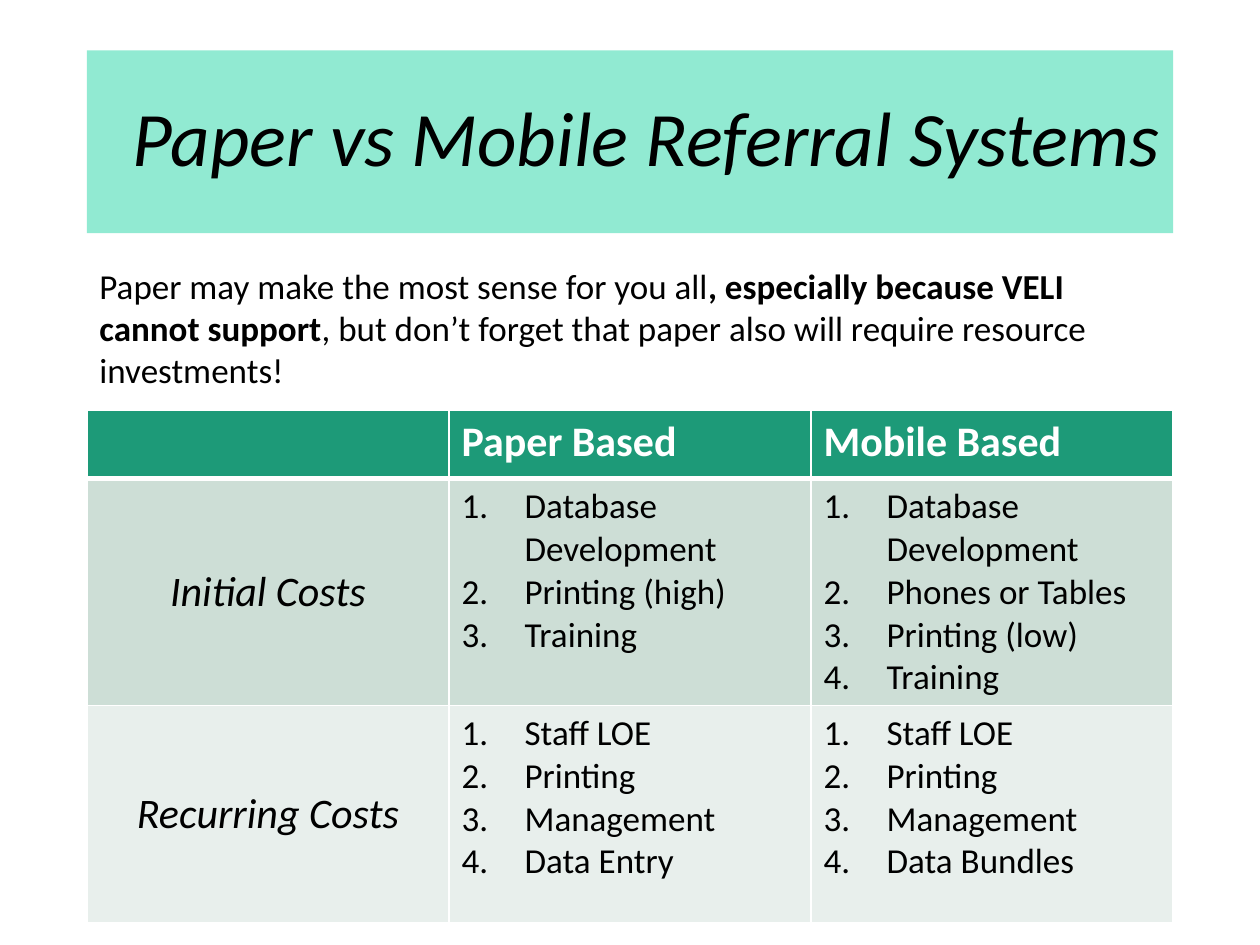
"""Build the slide comparing costs of paper and mobile referral systems."""
from lxml.etree import SubElement
from pptx import Presentation
from pptx.dml.color import RGBColor
from pptx.enum.shapes import MSO_SHAPE
from pptx.enum.text import MSO_ANCHOR, PP_ALIGN
from pptx.oxml.ns import qn
from pptx.util import Inches, Pt

BLACK = RGBColor(0x00, 0x00, 0x00)
WHITE = RGBColor(0xFF, 0xFF, 0xFF)
MINT = RGBColor(0x91, 0xEA, 0xD2)
GREEN = RGBColor(0x1D, 0x9A, 0x78)
SAGE = RGBColor(0xCD, 0xDE, 0xD6)
PALE = RGBColor(0xE8, 0xEF, 0xEC)

TITLE = "Paper vs Mobile Referral Systems"
INTRO = [
    ("Paper may make the most sense for you all", False),
    (", especially because VELI cannot support", True),
    (", but don’t forget that paper also will require resource investments!", False),
]
SYSTEMS = ["", "Paper Based", "Mobile Based"]
COSTS = [
    ("Initial Costs", SAGE, [
        ["Database Development", "Printing (high)", "Training"],
        ["Database Development", "Phones or Tables", "Printing (low)", "Training"],
    ]),
    ("Recurring Costs", PALE, [
        ["Staff LOE", "Printing", "Management", "Data Entry"],
        ["Staff LOE", "Printing", "Management", "Data Bundles"],
    ]),
]

LEFT, WIDTH = 0.69, 8.62
ROW_HEIGHTS = [0.54, 1.72, 1.72]
FORMATS = {
    "title": {"size": Pt(44), "italic": True},
    "intro": {"size": Pt(20)},
    "system": {"size": Pt(24), "bold": True},
    "category": {"size": Pt(24), "bold": False, "italic": True},
    "item": {"size": Pt(20), "bold": False},
}


def add_run(paragraph, text, role, color=BLACK, **extra):
    run = paragraph.add_run()
    run.text = text
    for name, value in {"name": "Calibri", **FORMATS[role], **extra}.items():
        setattr(run.font, name, value)
    run.font.color.rgb = color


def style_cell(cell, fill, bottom_width=1):
    properties = cell._tc.get_or_add_tcPr()
    for side, width in zip("LRTB", (1, 1, 1, bottom_width)):
        border = SubElement(properties, qn(f"a:ln{side}"), w=str(Pt(width)))
        paint = SubElement(border, qn("a:solidFill"))
        SubElement(paint, qn("a:srgbClr"), val=str(WHITE))
    cell.fill.solid()
    cell.fill.fore_color.rgb = fill


def add_numbered_list(frame, items):
    for index, item in enumerate(items):
        paragraph = frame.add_paragraph() if index else frame.paragraphs[0]
        properties = paragraph._p.get_or_add_pPr()
        properties.set("marL", str(Inches(0.5)))
        properties.set("indent", str(Inches(-0.5)))
        SubElement(properties, qn("a:buFont"), typeface="+mj-lt")
        SubElement(properties, qn("a:buAutoNum"), type="arabicPeriod")
        add_run(paragraph, item, "item")


def add_title(slide):
    banner = slide.shapes.add_shape(
        MSO_SHAPE.RECTANGLE, Inches(LEFT), Inches(0.4), Inches(WIDTH), Inches(1.45))
    banner.shadow.inherit = False
    banner.fill.solid()
    banner.fill.fore_color.rgb = MINT
    banner.line.fill.background()
    banner.text_frame.vertical_anchor = MSO_ANCHOR.MIDDLE
    heading = banner.text_frame.paragraphs[0]
    heading.alignment = PP_ALIGN.RIGHT
    heading.line_spacing = 0.9
    add_run(heading, TITLE, "title")


def add_cost_table(slide):
    costs = slide.shapes.add_table(
        len(COSTS) + 1, len(SYSTEMS), Inches(LEFT), Inches(3.26),
        Inches(WIDTH), Inches(sum(ROW_HEIGHTS))).table
    for row, height in zip(costs.rows, ROW_HEIGHTS):
        row.height = Inches(height)
    for column, system in enumerate(SYSTEMS):
        header = costs.cell(0, column)
        style_cell(header, GREEN, bottom_width=3)
        if system:
            add_run(header.text_frame.paragraphs[0], system, "system", WHITE)
    for row, (category, fill, lists) in enumerate(COSTS, 1):
        label = costs.cell(row, 0)
        style_cell(label, fill)
        label.vertical_anchor = MSO_ANCHOR.MIDDLE
        label.text_frame.paragraphs[0].alignment = PP_ALIGN.CENTER
        add_run(label.text_frame.paragraphs[0], category, "category")
        for column, items in enumerate(lists, 1):
            style_cell(costs.cell(row, column), fill)
            add_numbered_list(costs.cell(row, column).text_frame, items)


def add_intro(slide):
    intro = slide.shapes.add_textbox(
        Inches(LEFT), Inches(2.05), Inches(WIDTH), Inches(1.41)).text_frame
    intro.word_wrap = True
    for text, bold in INTRO:
        add_run(intro.paragraphs[0], text, "intro", bold=bold)


def main():
    deck = Presentation()
    deck.slide_width, deck.slide_height = Inches(10), Inches(7.5)
    slide = deck.slides.add_slide(deck.slide_layouts[6])
    add_title(slide)
    add_cost_table(slide)
    add_intro(slide)
    deck.save("out.pptx")


if __name__ == "__main__":
    main()
